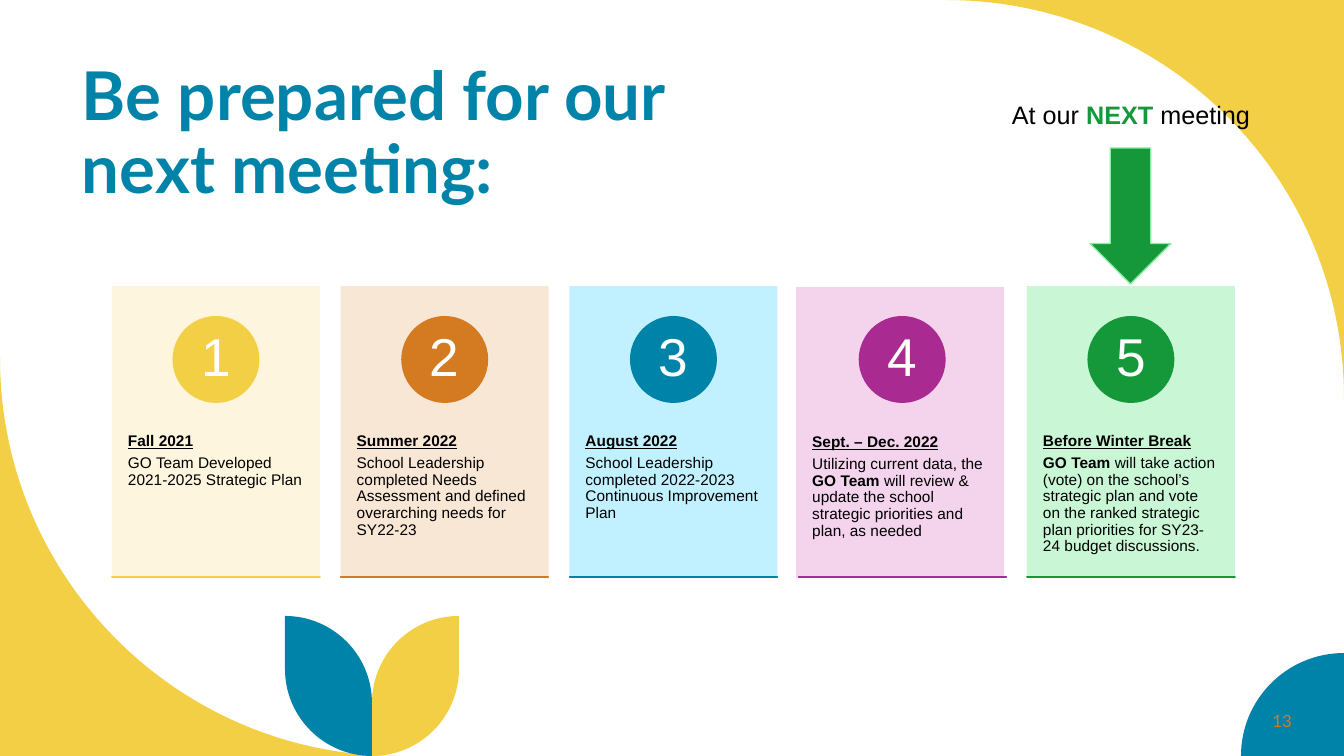
"""Build the slide on preparing for the next meeting: five dated steps."""
from math import cos, radians, sin

from lxml import etree
from pptx import Presentation
from pptx.dml.color import RGBColor
from pptx.enum.shapes import MSO_SHAPE
from pptx.enum.text import MSO_ANCHOR, PP_ALIGN
from pptx.oxml.ns import qn
from pptx.util import Pt

RECT, OVAL, DOWN = MSO_SHAPE.RECTANGLE, MSO_SHAPE.OVAL, MSO_SHAPE.DOWN_ARROW
TOP, MIDDLE = MSO_ANCHOR.TOP, MSO_ANCHOR.MIDDLE
LEFT, CENTER, RIGHT = PP_ALIGN.LEFT, PP_ALIGN.CENTER, PP_ALIGN.RIGHT

COLORS = {
    "gold": "F3CF45", "orange": "D47B22", "teal": "0083A9",
    "plum": "A92A91", "green": "159839", "mint": "89EFA5",
    "cream": "FDF5DA", "peach": "F8E5D1", "sky": "BBF0FF",
    "pink": "F3CFEC", "lime": "C4F7D2", "black": "000000", "white": "FFFFFF",
}
TITLE = "Be prepared for our next meeting:"
PAGE = "13"
CALL = [("At our ", {}), ("NEXT ", {"bold": True, "color": "green"}), ("meeting", {})]

BOLD = {"bold": True}
HEAD = {"bold": True, "line": True}
STEPS = [
    ("Fall 2021", [("GO Team Developed 2021-2025 Strategic Plan", {})],
     "gold", "cream", (0, 0)),
    ("Summer 2022",
     [("School Leadership completed Needs Assessment and defined "
       "overarching needs for SY22-23", {})],
     "orange", "peach", (0, 0)),
    ("August 2022",
     [("School Leadership completed 2022-2023 Continuous Improvement Plan", {})],
     "teal", "sky", (0, 0)),
    ("Sept. – Dec. 2022",
     [("Utilizing current data, the ", {}), ("GO Team ", BOLD),
      ("will review & update the school strategic priorities and plan, as needed", {})],
     "plum", "pink", (-2, 1)),
    ("Before Winter Break",
     [("GO Team ", BOLD),
      ("will take action (vote) on the school’s strategic plan and vote on "
       "the ranked strategic plan priorities for SY23-24 budget discussions.", {})],
     "green", "lime", (0, 0)),
]

ARCS = [
    ("gold", (1344, 0), [(946, 398, 398, 0, -90)]),
    ("gold", (0, 756), [(398, 358, 398, 180, 90)]),
    ("teal", (1344, 756), [(1344, 756, 103, -90, -180)]),
    ("gold", (459, 616), [(372, 669, 87, 0, 90), (459, 703, 87, 180, 270)]),
    ("teal", (285, 616), [(372, 669, 87, 180, 90), (285, 703, 87, 0, -90)]),
]
BEND = 0.5523

WIDE, HIGH = 1344, 756
SCALE = 12192000 / WIDE
CARD_X, LAST_X, CARD_Y, CARD_W, CARD_H = 112, 1027, 286, 208, 291
PITCH = (LAST_X - CARD_X) / (len(STEPS) - 1)
BODY_Y, BODY_H = 397, 174
DISC, DISC_Y, NUM = 87, 316, 62


def emu(*px):
    return [round(p * SCALE) for p in px]


def rgb(name):
    return RGBColor.from_string(COLORS[name])


def paint(shape, fill, line=None, alpha=None):
    shape.shadow.inherit = False
    shape.fill.solid()
    shape.fill.fore_color.rgb = rgb(fill)
    if alpha:
        tone = shape.fill._xPr.find(qn("a:solidFill"))[0]
        etree.SubElement(tone, qn("a:alpha"), val=str(alpha * 1000))
    if line:
        shape.line.color.rgb = rgb(line)
        shape.line.width = Pt(1)
    else:
        shape.line.fill.background()


def block(slide, kind, box, fill, line=None, alpha=None):
    paint(slide.shapes.add_shape(kind, *emu(*box)), fill, line, alpha)


def curve(x, y, r, start, end):
    (c, s), (e, f) = [(cos(radians(a)), sin(radians(a))) for a in (start, end)]
    return [(x + r * u, y + r * v) for u, v in (
        (c, s), (c + BEND * e, s + BEND * f), (e + BEND * c, f + BEND * s), (e, f))]


def outline(slide, fill, tip, arcs):
    dots = [p for arc in arcs for p in curve(*arc)]
    pen = slide.shapes.build_freeform(*emu(*tip))
    pen.add_line_segments([emu(*p) for p in dots], close=True)
    shape = pen.convert_to_shape()
    steps = list(shape._element.iter(qn("a:lnTo")))
    for i in range(0, len(dots), 4):
        first, second, last = steps[i + 1:i + 4]
        bez = etree.Element(qn("a:cubicBezTo"))
        first.addprevious(bez)
        for step in (first, second, last):
            bez.append(step[0])
            step.getparent().remove(step)
    paint(shape, fill)


def write(shape, paras, size, color="black", font="Arial", align=LEFT,
          anchor=TOP, pad=(10, 5), space=None, after=0):
    frame = shape.text_frame
    frame.word_wrap = True
    frame.vertical_anchor = anchor
    frame.margin_left = frame.margin_right = emu(pad[0])[0]
    frame.margin_top = frame.margin_bottom = emu(pad[1])[0]
    for i, runs in enumerate(paras):
        para = frame.add_paragraph() if i else frame.paragraphs[0]
        para.alignment = align
        para.line_spacing = space
        para.space_after = Pt(after)
        for text, style in runs:
            run = para.add_run()
            run.text = text
            run.font.name = font
            run.font.size = Pt(size)
            run.font.bold = style.get("bold", False)
            run.font.underline = style.get("line", False)
            run.font.color.rgb = rgb(style.get("color", color))


def label(slide, box, *args, **look):
    write(slide.shapes.add_textbox(*emu(*box)), *args, **look)


def panel(slide, box, *args, **look):
    shape = slide.shapes.add_shape(RECT, *emu(*box))
    shape.shadow.inherit = False
    shape.fill.background()
    shape.line.fill.background()
    write(shape, *args, space=0.9, **look)


def card(slide, i, step):
    head, body, tone, tint, (dx, dy) = step
    x = CARD_X + i * PITCH
    block(slide, RECT, (x + dx, CARD_Y + dy, CARD_W, CARD_H), tint, alpha=90)
    panel(slide, (x + dx, BODY_Y + dy, CARD_W, BODY_H), [[(head, HEAD)], body],
          11, pad=(16, 36), after=4)
    mid = x + CARD_W / 2
    block(slide, OVAL, (mid - DISC / 2, DISC_Y, DISC, DISC), tone)
    top = DISC_Y + (DISC - NUM) / 2
    panel(slide, (mid - NUM / 2, top, NUM, NUM), [[(str(i + 1), {})]], 38, "white",
          align=CENTER, anchor=MIDDLE, pad=(7, 1), after=13)
    block(slide, RECT, (x, CARD_Y + CARD_H, CARD_W, 0), tone, tone)


def main():
    deck = Presentation()
    deck.slide_width, deck.slide_height = emu(WIDE, HIGH)
    slide = deck.slides.add_slide(deck.slide_layouts[6])
    for arc in ARCS:
        outline(slide, *arc)
    label(slide, (72, 62, 694, 146), [[(TITLE, BOLD)]], 48, "teal", "Lato",
          anchor=MIDDLE, space=0.9)
    label(slide, (1120, 701, 182, 40), [[(PAGE, {})]], 12, "orange", "Lato",
          align=RIGHT, anchor=MIDDLE)
    for i, step in enumerate(STEPS):
        card(slide, i, step)
    block(slide, DOWN, (1090, 148, 81, 136), "green", "mint")
    label(slide, (989, 94, 284, 40), [CALL], 18, align=CENTER)
    deck.save("out.pptx")


if __name__ == "__main__":
    main()
